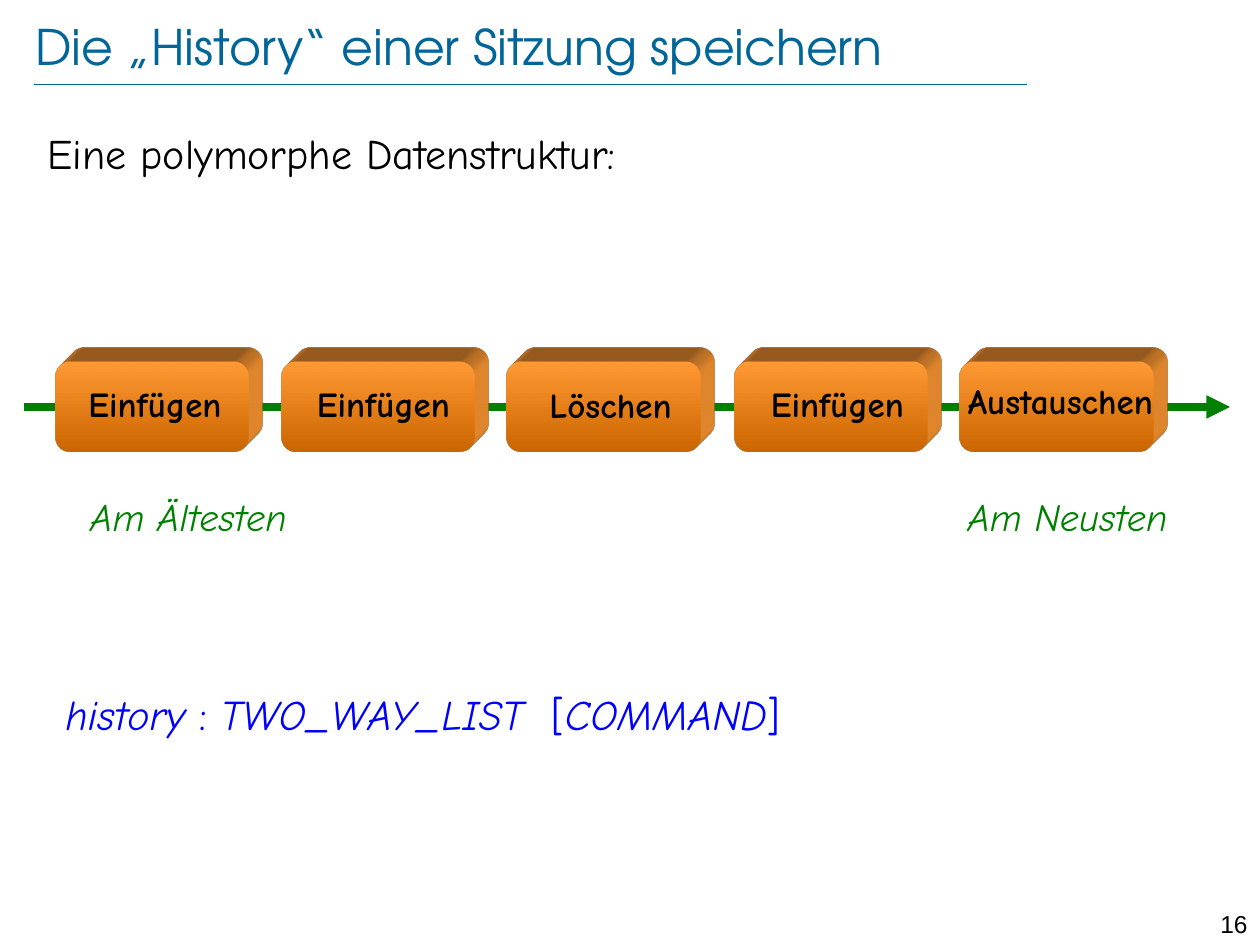
from lxml import etree
from pptx import Presentation
from pptx.dml.color import RGBColor
from pptx.enum.shapes import MSO_CONNECTOR, MSO_SHAPE
from pptx.enum.text import MSO_ANCHOR, PP_ALIGN
from pptx.oxml.ns import qn
from pptx.util import Pt

PX = 914400 / 126
LINE, ROUND = MSO_CONNECTOR.STRAIGHT, MSO_SHAPE.ROUNDED_RECTANGLE
TOP, MID = MSO_ANCHOR.TOP, MSO_ANCHOR.MIDDLE
LEFT, MIDDLE, RIGHT = PP_ALIGN.LEFT, PP_ALIGN.CENTER, PP_ALIGN.RIGHT
HEX = {"title": "006699", "black": "000000", "blue": "0000FF", "green": "008000",
       "light": "FF9933", "deep": "CC6600"}
HAND, HEAD, SANS = "Comic Neue", "TeX Gyre Adventor", "Arial"


def emu(*lengths):
    return [round(n * PX) for n in lengths]


def add(parent, tag, **attrs):
    return etree.SubElement(parent, qn(tag), **attrs)


class Deck:
    def __init__(self):
        self.prs = Presentation()
        self.prs.slide_width, self.prs.slide_height = emu(1260, 945)
        self.slide = self.prs.slides.add_slide(self.prs.slide_layouts[5])
        self.shapes = self.slide.shapes

    def style(self, run, size, color, face=HAND, bold=False, italic=False):
        font = run.font
        font.name, font.size = face, Pt(size)
        font.bold, font.italic = bold, italic
        font.color.rgb = RGBColor.from_string(HEX[color])

    def title(self, text, *box):
        shape = self.shapes.title
        shape.left, shape.top, shape.width, shape.height = emu(*box)
        frame = shape.text_frame
        frame.margin_left = frame.margin_right = 0
        frame.margin_top = frame.margin_bottom = 0
        frame.vertical_anchor = MID
        frame.text = text
        para = frame.paragraphs[0]
        para.alignment = LEFT
        self.style(para.runs[0], 28, "title", HEAD)

    def text(self, text, *box, size=24, color="black", face=HAND,
             align=LEFT, plate=False, **look):
        """Add a line of text, on a clear rounded plate if asked."""
        if plate:
            shape = self.shapes.add_shape(ROUND, *emu(*box))
            shape.shadow.inherit = False
            shape.fill.background()
            shape.line.fill.background()
        else:
            shape = self.shapes.add_textbox(*emu(*box))
        frame = shape.text_frame
        frame.word_wrap = True
        frame.vertical_anchor = MID if plate else TOP
        frame.text = text
        para = frame.paragraphs[0]
        para.alignment = align
        for run in para.runs:
            self.style(run, size, color, face, **look)
        return para

    def code(self, parts, *box):
        """Set a line of (text, italic, extra letter spacing) parts."""
        para = self.text("", *box)
        for text, slant, gap in parts:
            run = para.add_run()
            run.text = text
            self.style(run, 24, "blue", italic=slant)
            if gap:
                run.font._element.set("spc", str(gap))

    def line(self, x, y, end, color, width, arrow=False):
        item = self.shapes.add_connector(LINE, *emu(x, y, end, y))
        item.line.color.rgb = RGBColor.from_string(HEX[color])
        item.line.width = Pt(width)
        props = item._element.spPr
        if arrow:
            add(props.find(qn("a:ln")), "a:tailEnd", type="triangle")
        add(props, "a:effectLst")

    def block(self, *box, depth=40):
        """Add a shaded block with depth towards the top right."""
        shape = self.shapes.add_shape(ROUND, *emu(*box))
        shape.shadow.inherit = False
        shape.line.fill.background()
        shape.fill.gradient()
        shape.fill.gradient_angle = 270
        for stop, color, pos in zip(shape.fill.gradient_stops, ("light", "deep"), (0, 1)):
            stop.color.rgb = RGBColor.from_string(HEX[color])
            stop.position = pos
        props = shape._element.spPr
        scene = add(props, "a:scene3d")
        add(scene, "a:camera", prst="legacyObliqueTopRight")
        add(scene, "a:lightRig", rig="legacyFlat3", dir="b")
        solid = add(props, "a:sp3d", extrusionH=str(emu(depth)[0]), prstMaterial="legacyMatte")
        add(add(solid, "a:extrusionClr"), "a:srgbClr", val=HEX["light"])


def main():
    deck = Deck()
    deck.line(34, 84, 1027, "title", 0.25)
    deck.title("Die „History“ einer Sitzung speichern", 35, 16, 1095, 60)
    deck.text("16", 1191, 903, 69, 30, size=14, face=SANS, align=RIGHT)
    deck.text("Eine polymorphe Datenstruktur:", 35, 121, 1184, 777)
    deck.code([("history ", True, 0), (": ", False, 0), ("TWO_WAY_LIST", True, 0),
               (" ", True, 800), ("[", False, 0), ("COMMAND", True, 0), ("]", False, 0)],
              53, 682, 1155, 63)
    deck.line(24, 407, 1230, "green", 4.5, arrow=True)

    for i in range(5):
        deck.block(55 + round(226.2 * i), 362, 193, 90)
    for name, plate, *box in (("Löschen", False, 523, 377, 175, 55),
                              ("Austauschen", False, 941, 373, 239, 55),
                              ("Einfügen", True, 55, 374, 200, 60),
                              ("Einfügen", True, 285, 374, 197, 60),
                              ("Einfügen", True, 738, 374, 199, 60)):
        deck.text(name, *box, size=20, align=MIDDLE, plate=plate, bold=True)

    for name, x, wide in (("Am Ältesten", 40, 297), ("Am Neusten", 932, 271)):
        deck.text(name, x, 487, wide, 59, size=22, color="green", align=MIDDLE, italic=True)
    deck.prs.save("out.pptx")


if __name__ == "__main__":
    main()
